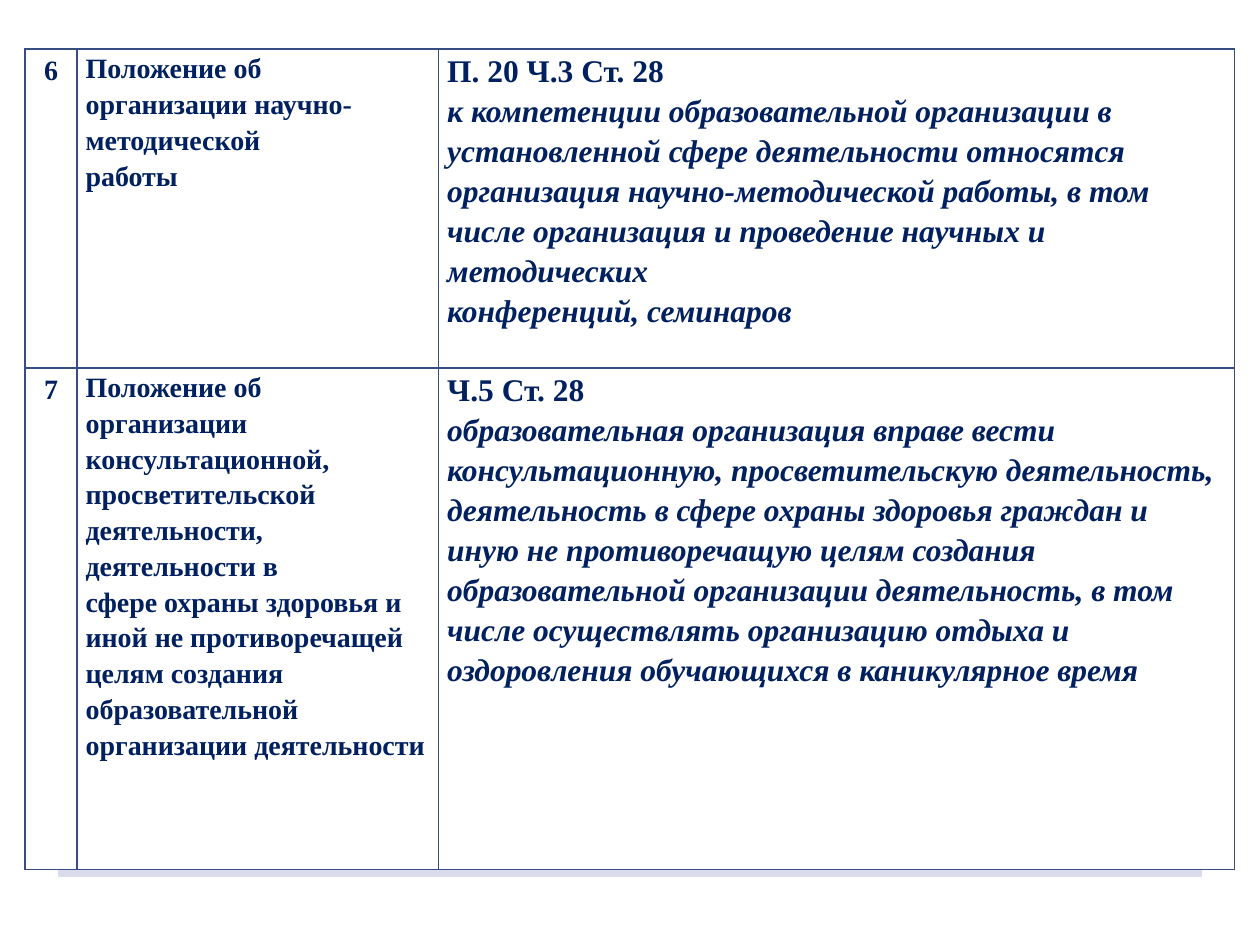
"""Builds a slide with a table of local regulations and their legal grounds."""
from lxml import etree
from pptx import Presentation
from pptx.dml.color import RGBColor
from pptx.enum.shapes import MSO_SHAPE
from pptx.enum.text import PP_ALIGN
from pptx.oxml.ns import qn
from pptx.util import Inches, Pt

PROCESS = MSO_SHAPE.FLOWCHART_PROCESS
CENTER, LEFT = PP_ALIGN.CENTER, PP_ALIGN.LEFT

FONT = "Times New Roman"
INK, PAPER, PANEL, BORDER = "002060", "FFFFFF", "DADCEC", "374C81"
BLANK_LAYOUT = 6
SLIDE_WIDTH, SLIDE_HEIGHT = 10, 7.5
TOP = 0.39
PANEL_WIDTH, PANEL_HEIGHT = 9.06, 6.56
COLUMN_WIDTHS = [0.41, 2.87, 6.32]
ROW_HEIGHTS = [2.53, 3.98]

REGULATIONS = [
    (
        ["6"],
        ["Положение об организации научно-методическая".replace("методическая", "методической"), "работы"],
        [
            "П. 20 Ч.3 Ст. 28",
            "к компетенции образовательной организации в установленной сфере "
            "деятельности относятся организация научно-методической работы, в том "
            "числе организация и проведение научных и методических",
            "конференций, семинаров",
        ],
    ),
    (
        ["7"],
        [
            "Положение об организации консультационной,",
            "просветительской деятельности, деятельности в",
            "сфере охраны здоровья и",
            "иной не противоречащей",
            "целям создания образовательной организации деятельности",
        ],
        [
            "Ч.5 Ст. 28",
            "образовательная организация вправе вести",
            "консультационную, просветительскую деятельность, деятельность в сфере "
            "охраны здоровья граждан и иную не противоречащую целям создания",
            "образовательной организации деятельность, в том числе осуществлять "
            "организацию отдыха и оздоровления обучающихся в каникулярное время",
        ],
    ),
]


def color(value):
    """Return the colour for a hex string."""
    return RGBColor.from_string(value)


def add_borders(cell):
    """Draw a thin line on all four sides of a cell."""
    properties = cell._tc.get_or_add_tcPr()
    for index, side in enumerate(("a:lnL", "a:lnR", "a:lnT", "a:lnB")):
        line = etree.Element(qn(side), w=str(Pt(1)))
        fill = etree.SubElement(line, qn("a:solidFill"))
        etree.SubElement(fill, qn("a:srgbClr"), val=BORDER)
        properties.insert(index, line)


def fill_cell(cell, texts, column):
    """Write the paragraphs of a cell in the style of its column."""
    cell.fill.solid()
    cell.fill.fore_color.rgb = color(PAPER)
    add_borders(cell)
    if column > 0:
        cell.margin_left = cell.margin_right = Inches(0.07)
        cell.margin_top = cell.margin_bottom = 0
    cell.text = "\n".join(texts)
    for index, paragraph in enumerate(cell.text_frame.paragraphs):
        paragraph.alignment = LEFT if column > 0 else CENTER
        paragraph.line_spacing = 1.15 if column > 0 else 1.0
        font = paragraph.font
        font.name = FONT
        font.size = Pt(18 if column == 2 else 16)
        font.bold = True
        font.italic = column == 2 and index > 0
        font.color.rgb = color(INK)


def add_panel(slide):
    """Add the pale panel behind the table."""
    left = (SLIDE_WIDTH - PANEL_WIDTH) / 2
    panel = slide.shapes.add_shape(
        PROCESS, Inches(left), Inches(TOP), Inches(PANEL_WIDTH), Inches(PANEL_HEIGHT)
    )
    panel.shadow.inherit = False
    panel.fill.solid()
    panel.fill.fore_color.rgb = color(PANEL)
    panel.line.color.rgb = color(PANEL)
    panel.line.width = Pt(1)


def add_regulations(slide):
    """Add the table of regulations."""
    width, height = sum(COLUMN_WIDTHS), sum(ROW_HEIGHTS)
    left = (SLIDE_WIDTH - width) / 2
    table = slide.shapes.add_table(
        len(ROW_HEIGHTS), len(COLUMN_WIDTHS),
        Inches(left), Inches(TOP), Inches(width), Inches(height),
    ).table
    table.first_row = table.horz_banding = False
    for column, size in zip(table.columns, COLUMN_WIDTHS):
        column.width = Inches(size)
    for row, size, regulation in zip(table.rows, ROW_HEIGHTS, REGULATIONS):
        row.height = Inches(size)
        for column, (cell, texts) in enumerate(zip(row.cells, regulation)):
            fill_cell(cell, texts, column)


def main():
    """Build and save the presentation."""
    presentation = Presentation()
    presentation.slide_width = Inches(SLIDE_WIDTH)
    presentation.slide_height = Inches(SLIDE_HEIGHT)
    slide = presentation.slides.add_slide(presentation.slide_layouts[BLANK_LAYOUT])
    add_panel(slide)
    add_regulations(slide)
    presentation.save("out.pptx")


if __name__ == "__main__":
    main()
